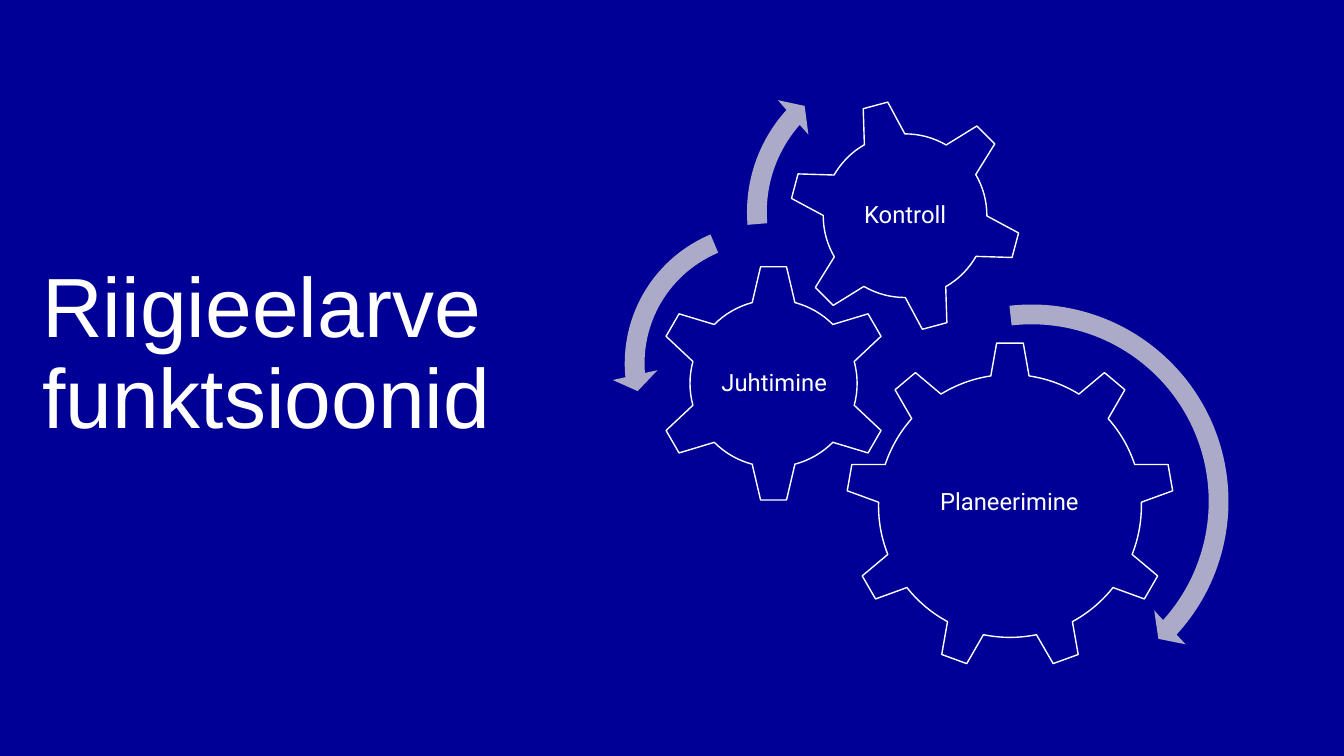
from dataclasses import dataclass

from pptx import Presentation
from pptx import util as u
from pptx.dml.color import RGBColor
from pptx.enum import shapes, text

SHAPE = shapes.MSO_SHAPE


@dataclass(frozen=True)
class Theme:
    back: RGBColor = RGBColor(0x00, 0x00, 0x96)
    ink: RGBColor = RGBColor(0xFF, 0xFF, 0xFF)
    arrow: RGBColor = RGBColor(0xAB, 0xAB, 0xC9)
    title_font: str = "Arial"
    label_font: str = "Roboto"
    title_size: int = 60
    label_size: int = 17
    outline: float = 1


def write(box, words, *, font, size, color, align, anchor, inset=0):
    frame = box.text_frame
    frame.word_wrap = True
    frame.vertical_anchor = anchor
    frame.margin_left = frame.margin_right = u.Pt(inset)
    frame.margin_top = frame.margin_bottom = u.Pt(inset)
    para = frame.paragraphs[0]
    para.alignment = align
    para.line_spacing = 0.9
    span = para.add_run()
    span.text = words
    span.font.name = font
    span.font.size = u.Pt(size)
    span.font.color.rgb = color


class GearSlide:
    def __init__(self, deck, theme):
        self.theme = theme
        self.page = deck.slides.add_slide(deck.slide_layouts[6])
        fill = self.page.background.fill
        fill.solid()
        fill.fore_color.rgb = theme.back

    def start_diagram(self):
        self.diagram = self.page.shapes.add_group_shape().shapes

    def title(self, words, left, top, width, height):
        box = self.page.shapes.add_textbox(*map(u.Pt, (left, top, width, height)))
        write(box, words, font=self.theme.title_font, size=self.theme.title_size,
              color=self.theme.ink, align=text.PP_ALIGN.LEFT,
              anchor=text.MSO_ANCHOR.TOP)

    def square_shape(self, kind, left, top, side, color):
        shape = self.diagram.add_shape(kind, *map(u.Pt, (left, top, side, side)))
        shape.shadow.inherit = False
        shape.fill.solid()
        shape.fill.fore_color.rgb = color
        return shape

    def gear(self, kind, left, top, side, turn):
        gear = self.square_shape(kind, left, top, side, self.theme.back)
        gear.line.color.rgb = self.theme.ink
        gear.line.width = u.Pt(self.theme.outline)
        gear.rotation = turn

    def label(self, words, center_x, center_y, width, height):
        box = self.diagram.add_textbox(
            u.Pt(center_x - width / 2), u.Pt(center_y - height / 2),
            u.Pt(width), u.Pt(height))
        write(box, words, font=self.theme.label_font, size=self.theme.label_size,
              color=self.theme.ink, align=text.PP_ALIGN.CENTER,
              anchor=text.MSO_ANCHOR.MIDDLE, inset=1.5)

    def arc_arrow(self, kind, left, top, side, band, angles, head):
        """Band and head are shares of the side; angles are degrees."""
        arrow = self.square_shape(kind, left, top, side, self.theme.arrow)
        arrow.line.fill.background()
        # Angle adjustments count 60000 units a degree, against a base of 100000.
        values = [band, *(angle * 0.6 for angle in angles), head]
        for index, value in enumerate(values):
            arrow.adjustments[index] = value


GEARS = [  # shape, left, top, side, turn, label, label centre and size
    (SHAPE.GEAR_9, 604.1, 244.1, 234.7, 0, "Planeerimine", (721, 359.3, 140.4, 121)),
    (SHAPE.GEAR_6, 467.3, 188.6, 170.6, 0, "Juhtimine", (553, 274, 85, 84.2)),
    (SHAPE.GEAR_6, 563, 70.6, 167, 345, "Kontroll", (646.6, 154.1, 93.6, 93.6)),
]
ARROWS = [  # shape, left, top, side, band, (head angle, end, start), head
    (SHAPE.CIRCULAR_ARROW, 586.8, 208.1, 300.2,
     0.047, (4.98, 42.32, 263.54), 0.055),
    (SHAPE.LEFT_CIRCULAR_ARROW, 437, 150.5, 218.2,
     0.065, (7.17, 174.82, 247.3), 0.075),
    (SHAPE.CIRCULAR_ARROW, 524.2, 33.8, 235.4,
     0.06, (6.57, 221.9, 175.14), 0.07),
]


def main():
    deck = Presentation()
    deck.slide_width, deck.slide_height = u.Pt(960), u.Pt(540)
    slide = GearSlide(deck, Theme())
    slide.title("Riigieelarve funktsioonid", 30.2, 189.4, 595.4, 127.4)
    slide.start_diagram()
    for kind, left, top, side, turn, words, label_place in GEARS:
        slide.gear(kind, left, top, side, turn)
        slide.label(words, *label_place)
    for arrow in ARROWS:
        slide.arc_arrow(*arrow)
    deck.save("out.pptx")


if __name__ == "__main__":
    main()
